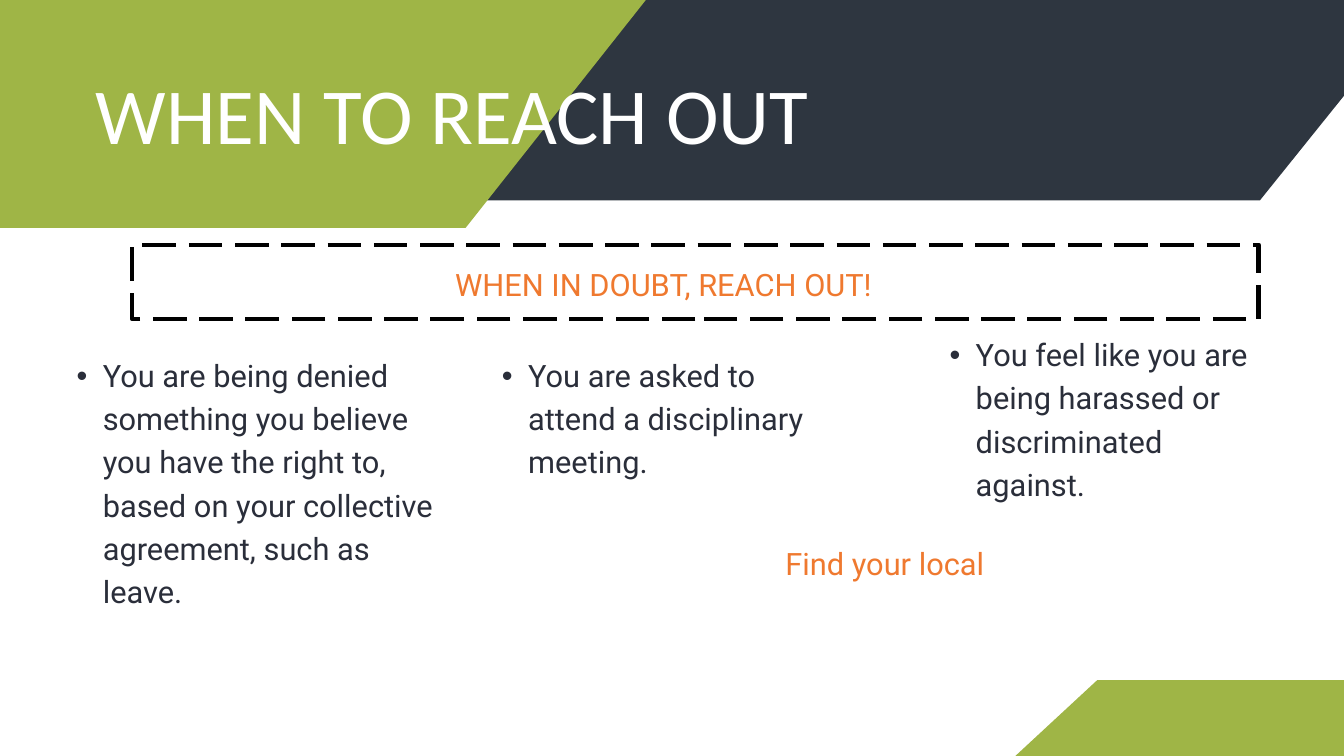
from dataclasses import dataclass

from lxml.etree import SubElement
from pptx import Presentation
from pptx.dml.color import RGBColor
from pptx.enum.dml import MSO_LINE
from pptx.enum.shapes import MSO_SHAPE
from pptx.enum.text import PP_ALIGN
from pptx.oxml.ns import qn
from pptx.util import Inches, Pt


@dataclass(frozen=True)
class Theme:
    green: RGBColor = RGBColor(0x9F, 0xB5, 0x46)
    navy: RGBColor = RGBColor(0x2E, 0x36, 0x40)
    orange: RGBColor = RGBColor(0xEF, 0x79, 0x2F)
    ink: RGBColor = RGBColor(0x2A, 0x2E, 0x3A)
    white: RGBColor = RGBColor(0xFF, 0xFF, 0xFF)
    black: RGBColor = RGBColor(0, 0, 0)
    title_font: str = "Calibri"
    body_font: str = "Roboto"
    title_size: Pt = Pt(85)
    title_leading: Pt = Pt(102)
    body_size: Pt = Pt(33)
    body_leading: Pt = Pt(46.2)


THEME = Theme()


def add_band(slide, points, color):
    corners = [(Inches(x), Inches(y)) for x, y in points]
    builder = slide.shapes.build_freeform(*corners[0])
    builder.add_line_segments(corners[1:], close=True)
    band = builder.convert_to_shape()
    band.shadow.inherit = False
    band.fill.solid()
    band.fill.fore_color.rgb = color
    band.line.fill.background()


def add_dashed_frame(slide, left, top, width, height):
    frame = slide.shapes.add_shape(
        MSO_SHAPE.RECTANGLE, Inches(left), Inches(top), Inches(width), Inches(height)
    )
    frame.shadow.inherit = False
    frame.fill.background()
    frame.line.color.rgb = THEME.black
    frame.line.width = Pt(4.5)
    frame.line.dash_style = MSO_LINE.LONG_DASH


def add_text(slide, text, left, top, width, height, color, align=PP_ALIGN.LEFT,
             font=THEME.body_font, size=THEME.body_size, leading=THEME.body_leading):
    box = slide.shapes.add_textbox(Inches(left), Inches(top), Inches(width), Inches(height))
    frame = box.text_frame
    frame.word_wrap = True
    frame.margin_left = frame.margin_top = frame.margin_right = frame.margin_bottom = 0
    paragraph = frame.paragraphs[0]
    paragraph.text = text
    paragraph.alignment = align
    paragraph.line_spacing = leading
    paragraph.font.name = font
    paragraph.font.size = size
    paragraph.font.color.rgb = color
    return paragraph


def add_bullet(slide, text, left, top, width, height):
    paragraph = add_text(slide, text, left, top, width, height, THEME.ink)
    paragraph.level = 1
    properties = paragraph._p.get_or_add_pPr()
    properties.set("marL", str(Inches(0.78)))
    properties.set("indent", str(Inches(-0.39)))
    bullet_font = SubElement(properties, qn("a:buFont"))
    bullet_font.set("typeface", "Arial")
    bullet = SubElement(properties, qn("a:buChar"))
    bullet.set("char", "•")
    properties.append(properties.find(qn("a:defRPr")))


def main():
    presentation = Presentation()
    presentation.slide_width = Inches(20)
    presentation.slide_height = Inches(11.25)
    slide = presentation.slides.add_slide(presentation.slide_layouts[6])

    add_band(slide, [(18.75, 2.98), (4.44, 2.98), (-0.35, -2.98), (23.54, -2.98)], THEME.navy)
    add_band(slide, [(6.93, 3.39), (-4.08, 3.39), (-6.84, -0.1), (9.69, -0.1)], THEME.green)
    add_band(slide, [(16.33, 10.12), (20.19, 10.12), (21.41, 11.25), (15.11, 11.25)], THEME.green)

    add_text(slide, " WHEN TO REACH OUT", 1.16, 0.97, 14.26, 1.41, THEME.white,
             font=THEME.title_font, size=THEME.title_size, leading=THEME.title_leading)

    add_dashed_frame(slide, 1.97, 3.64, 16.76, 1.11)
    add_text(slide, "WHEN IN DOUBT, REACH OUT!", 2.29, 3.86, 15.17, 0.61,
             THEME.orange, PP_ALIGN.CENTER)

    reasons = [
        ("You are being denied something you believe you have the right to, "
         "based on your collective agreement, such as leave.", 0.75, 5.22, 5.76, 3.8),
        ("You are asked to attend a disciplinary meeting.", 7.08, 5.22, 4.97, 1.9),
        ("You feel like you are being harassed or discriminated against.",
         13.74, 4.91, 4.99, 2.53),
    ]
    for reason in reasons:
        add_bullet(slide, *reason)

    add_text(slide, "Find your local ", 10.22, 8.01, 6.01, 0.63, THEME.orange, PP_ALIGN.CENTER)

    presentation.save("out.pptx")


if __name__ == "__main__":
    main()
